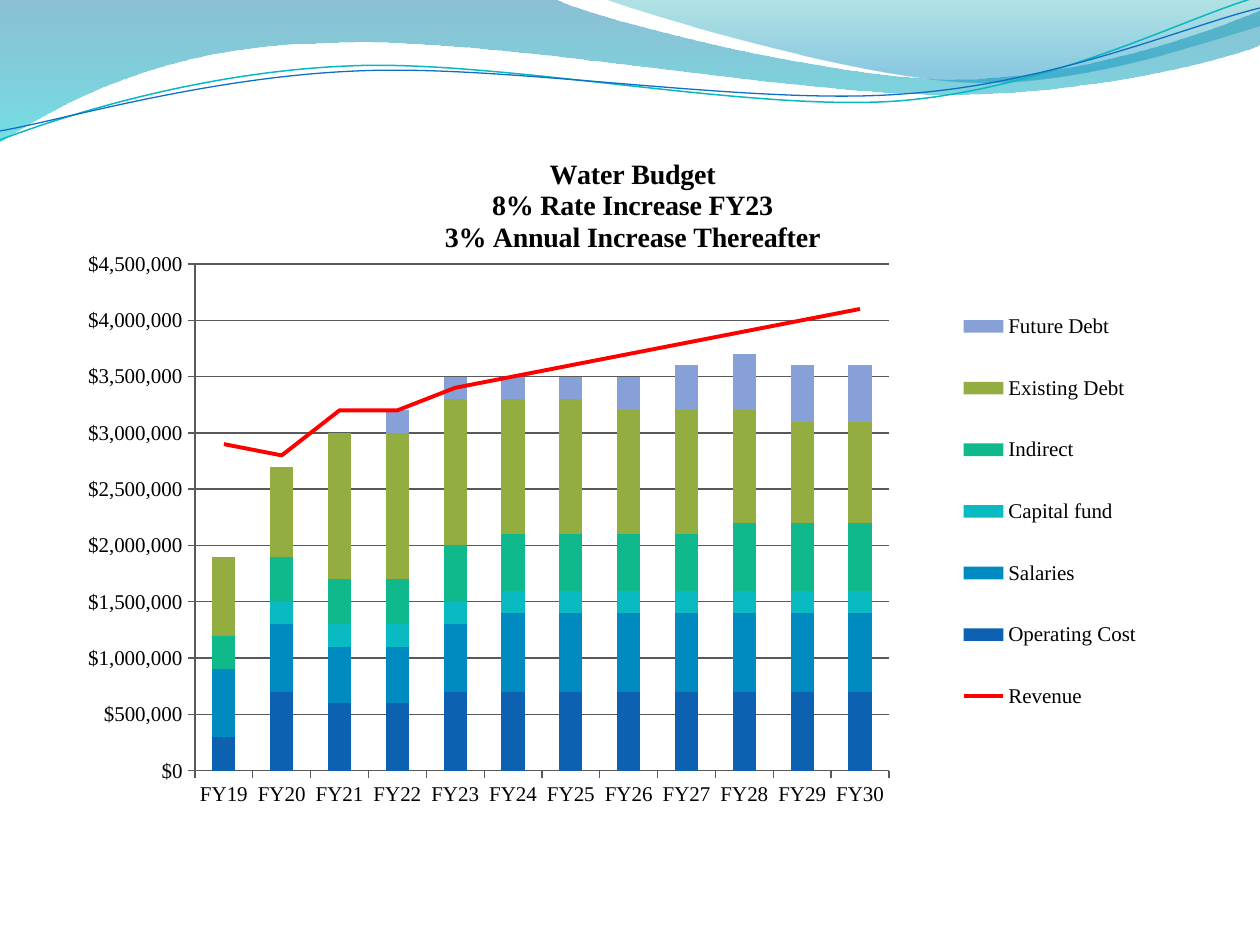
from dataclasses import dataclass

from pptx import Presentation
from pptx.chart.data import CategoryChartData
from pptx.dml.color import RGBColor
from pptx.enum.chart import XL_CHART_TYPE, XL_LEGEND_POSITION, XL_MARKER_STYLE, XL_TICK_MARK
from pptx.enum.text import PP_ALIGN
from pptx.oxml import parse_xml
from pptx.oxml.ns import nsdecls, qn
from pptx.util import Pt
from math import cos, radians, sin

SCALE = 914400 / 126
CHART_BOX = (10, 147, 1239, 683)


@dataclass(frozen=True)
class Theme:
    """Colours, font and type sizes of the slide."""
    font: str = "Times New Roman"
    title_size: int = 16
    label_size: int = 12
    text: str = "000000"
    axis: str = "595959"
    teal_line: str = "0AB8BF"
    blue_line: str = "0F6FC6"
    revenue: str = "FF0000"
    wide_wave: tuple = ((0, "0074A1", 45), (100, "00C6CF", 55))
    right_wave: tuple = ((0, "00A1A9", 30), (80, "008BBF", 45))
    columns: tuple = ("0C62B0", "008BC0", "0ABAC2", "0FB98B", "93AD41", "87A0D7")


THEME = Theme()
TITLE = ("Water Budget", "8% Rate Increase FY23", "3% Annual Increase Thereafter")
YEARS = [f"FY{year}" for year in range(19, 31)]
UNIT = 100_000
BUDGET = {
    "Operating Cost": (3, 7, 6, 6, 7, 7, 7, 7, 7, 7, 7, 7),
    "Salaries": (6, 6, 5, 5, 6, 7, 7, 7, 7, 7, 7, 7),
    "Capital fund": (0, 2, 2, 2, 2, 2, 2, 2, 2, 2, 2, 2),
    "Indirect": (3, 4, 4, 4, 5, 5, 5, 5, 5, 6, 6, 6),
    "Existing Debt": (7, 8, 13, 13, 13, 12, 12, 11, 11, 10, 9, 9),
    "Future Debt": (0, 0, 0, 2, 2, 2, 2, 3, 4, 5, 5, 5),
    "Revenue": (29, 28, 32, 32, 34, 35, 36, 37, 38, 39, 40, 41),
}
WIDE_WAVE = ((0, 0), (554, -1), (600, 21, 837, 79, 955, 79), (1075, 79, 1207, 33, 1260, 11),
             (1261, 45), (1239, 55, 1096, 96, 940, 94), (784, 94, 481, 35, 324, 43),
             (163, 45, 58, 105, -1, 142))
RIGHT_WAVE = ((604, -1), (642, 14, 859, 78, 969, 82), (1079, 87, 1211, 40, 1260, 26), (1260, 0))
TEAL_LINE = ((0, 140), (60, 117, 199, 72, 349, 66), (498, 59, 747, 112, 898, 101),
             (1050, 89, 1182, 19, 1257, -3))
BLUE_LINE = ((0, 131), (59, 121, 207, 77, 357, 71), (508, 64, 752, 106, 903, 94),
             (1053, 84, 1186, 26, 1260, 8))


def px(length):
    """Turn pixels into EMU."""
    return round(length * SCALE)


def point_xml(x, y, frame, rotation):
    """Place a slide point inside a frame that is turned about its middle."""
    left, top, width, height = frame
    across, down = x - left - width / 2, y - top - height / 2
    angle = radians(-rotation)
    local_x = across * cos(angle) - down * sin(angle) + width / 2
    local_y = across * sin(angle) + down * cos(angle) + height / 2
    return f'<a:pt x="{px(local_x)}" y="{px(local_y)}"/>'


def add_outline(page, outline, frame, rotation=0, close=False):
    """Draw a freeform of straight and cubic parts without a shadow."""
    builder = page.shapes.build_freeform(*outline[0], scale=SCALE)
    builder.add_line_segments([part[-2:] for part in outline[1:]], close=close)
    shape = builder.convert_to_shape()
    shape.left, shape.top, shape.width, shape.height = map(px, frame)
    shape.rotation = rotation
    shape.shadow.inherit = False
    steps = ""
    for index, part in enumerate(outline):
        tag = "moveTo" if index == 0 else "lnTo" if len(part) == 2 else "cubicBezTo"
        points = "".join(point_xml(x, y, frame, rotation) for x, y in zip(part[::2], part[1::2]))
        steps += f"<a:{tag}>{points}</a:{tag}>"
    steps += "<a:close/>" if close else ""
    track = shape.element.xpath(".//a:pathLst/a:path")[0]
    track.getparent().replace(track, parse_xml(
        f'<a:path {nsdecls("a")} w="{shape.width}" h="{shape.height}">{steps}</a:path>'))
    return shape


def add_wave(page, outline, frame, stops):
    """Draw a closed wave with a vertical, translucent gradient."""
    shape = add_outline(page, outline, frame, close=True)
    shape.line.fill.background()
    shape.fill.gradient()
    shape.fill.gradient_angle = 270
    for stop, (position, colour, _) in zip(shape.fill.gradient_stops, stops):
        stop.position = position / 100
        stop.color.rgb = RGBColor.from_string(colour)
    for colour, (_, _, opacity) in zip(shape.element.xpath(".//a:gs/a:srgbClr"), stops):
        colour.append(parse_xml(f'<a:alpha {nsdecls("a")} val="{opacity * 1000}"/>'))


def style_line(line, colour, width):
    """Set the colour and width of a line."""
    line.color.rgb = RGBColor.from_string(colour)
    line.width = Pt(width)


def add_curve(page, outline, frame, colour, width):
    """Draw an open curved line in a slightly turned frame."""
    shape = add_outline(page, outline, frame, rotation=357.3)
    shape.fill.background()
    style_line(shape.line, colour, width)


def style_font(font, size=THEME.label_size, bold=False):
    """Set the font of a chart text."""
    font.name, font.size, font.bold = THEME.font, Pt(size), bold
    font.color.rgb = RGBColor.from_string(THEME.text)


def write_text(frame, text, first=False, **style):
    """Write one centred paragraph."""
    para = frame.paragraphs[0] if first else frame.add_paragraph()
    para.alignment = PP_ALIGN.CENTER
    span = para.add_run()
    span.text = text
    style_font(span.font, **style)


def set_layout(chart, part, index, place, inner=False):
    """Fix a chart part at a place given in pixels from the chart's corner."""
    parent = chart.element.xpath(f".//c:{part}")[0]
    for old in parent.findall(qn("c:layout")):
        parent.remove(old)
    target = '<c:layoutTarget val="inner"/>' if inner else ""
    sizes = "".join(f'<c:{name} val="{length / whole}"/>'
                    for name, length, whole in zip("xywh", place, CHART_BOX[2:] * 2))
    parent.insert(index, parse_xml(
        f'<c:layout {nsdecls("c")}><c:manualLayout>{target}<c:xMode val="edge"/>'
        f'<c:yMode val="edge"/>{sizes}</c:manualLayout></c:layout>'))


def move_last_series_to_line(chart):
    """Show the last column series as a line on the same axes."""
    columns = chart.plots[0]
    bar = chart.element.xpath(".//c:barChart")[0]
    series = bar.findall(qn("c:ser"))[-1]
    for flag in series.findall(qn("c:invertIfNegative")):
        series.remove(flag)
    axes = "".join(f'<c:axId val="{axis.get("val")}"/>' for axis in bar.findall(qn("c:axId")))
    line_chart = parse_xml(f'<c:lineChart {nsdecls("c")}><c:grouping val="standard"/>'
                           f'<c:varyColors val="0"/><c:marker val="1"/>{axes}</c:lineChart>')
    line_chart.insert(2, series)
    bar.addnext(line_chart)
    columns.gap_width, columns.overlap = 150, 100
    columns.vary_by_categories = False
    for item, colour in zip(columns.series, THEME.columns):
        item.format.fill.solid()
        item.format.fill.fore_color.rgb = RGBColor.from_string(colour)
    revenue = chart.plots[1].series[0]
    revenue.smooth = False
    revenue.marker.style = XL_MARKER_STYLE.NONE
    style_line(revenue.format.line, THEME.revenue, 2.25)


def add_budget_chart(page):
    """Add the stacked cost columns with the revenue line."""
    data = CategoryChartData(number_format='"$"#,##0')
    data.categories = YEARS
    for name, values in BUDGET.items():
        data.add_series(name, [value * UNIT for value in values])
    chart = page.shapes.add_chart(XL_CHART_TYPE.COLUMN_STACKED, *map(px, CHART_BOX), data).chart
    style_font(chart.font)
    move_last_series_to_line(chart)
    for index, line in enumerate(TITLE):
        write_text(chart.chart_title.text_frame, line, first=index == 0,
                   size=THEME.title_size, bold=True)
    for axis in (chart.category_axis, chart.value_axis):
        axis.major_tick_mark = XL_TICK_MARK.OUTSIDE
        style_font(axis.tick_labels.font)
        style_line(axis.format.line, THEME.axis, 0.75)
    values = chart.value_axis
    values.minimum_scale, values.maximum_scale, values.major_unit = 0, 45 * UNIT, 5 * UNIT
    values.tick_labels.number_format = '"$"#,##0'
    values.tick_labels.number_format_is_linked = False
    style_line(values.major_gridlines.format.line, THEME.axis, 0.75)
    chart.has_legend = True
    chart.legend.position = XL_LEGEND_POSITION.RIGHT
    chart.legend.include_in_layout = False
    style_font(chart.legend.font)
    set_layout(chart, "title", 1, (431, 6))
    set_layout(chart, "legend", 1, (941, 129, 198, 471))
    set_layout(chart, "plotArea", 0, (185, 117, 694, 507), inner=True)


def main():
    """Build and save the slide."""
    deck = Presentation()
    deck.slide_width, deck.slide_height = px(1260), px(945)
    page = deck.slides.add_slide(deck.slide_layouts[6])
    add_wave(page, WIDE_WAVE, (-1, -1, 1262, 143), THEME.wide_wave)
    add_wave(page, RIGHT_WAVE, (604, -1, 656, 88), THEME.right_wave)
    add_curve(page, TEAL_LINE, (-3, 28, 1263, 89), THEME.teal_line, 0.85)
    add_curve(page, BLUE_LINE, (-3, 38, 1264, 73), THEME.blue_line, 0.75)
    add_budget_chart(page)
    deck.save("out.pptx")


if __name__ == "__main__":
    main()
